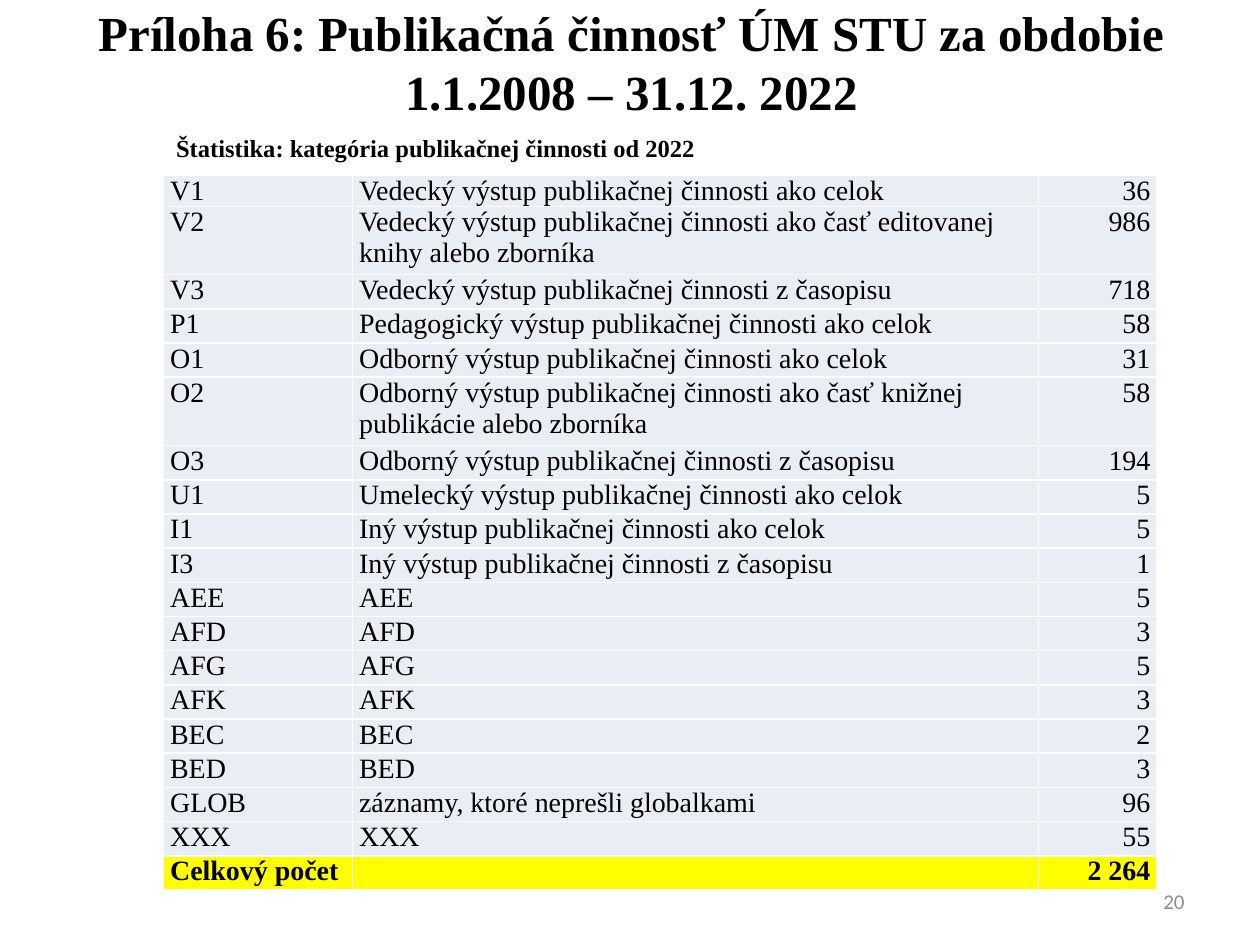
from lxml.etree import SubElement
from pptx import Presentation
from pptx.dml.color import RGBColor
from pptx.enum.text import MSO_ANCHOR as Anchor, PP_ALIGN as Align
from pptx.oxml.ns import qn
from pptx.util import Cm, Pt

BLACK = RGBColor(0x00, 0x00, 0x00)
GREY = RGBColor(0x8C, 0x8C, 0x8C)
PALE = RGBColor(0xE9, 0xED, 0xF4)
YELLOW = RGBColor(0xFF, 0xFF, 0x00)
WHITE = RGBColor(0xFF, 0xFF, 0xFF)
SERIF = "Times New Roman"

HEADINGS = [
    ("Príloha 6: Publikačná činnosť ÚM STU za obdobie 1.1.2008 – 31.12. 2022",
     (1.3, 0.23, 22.86, 2.36), Align.CENTER, {"margin_bottom": Cm(0.46), "word_wrap": True},
     {"size": Pt(28), "name": SERIF, "bold": True}, BLACK),
    ("Štatistika: kategória publikačnej činnosti od 2022",
     (3.3, 2.54, 11.99, 0.86), Align.LEFT, {"word_wrap": False},
     {"size": Pt(14), "name": SERIF, "bold": True}, BLACK),
    ("20", (18.21, 17.65, 5.92, 1.02), Align.RIGHT, {"word_wrap": True},
     {"size": Pt(12), "name": "Calibri", "bold": False}, GREY),
]

PUBLICATIONS = [
    ("V1", "Vedecký výstup publikačnej činnosti ako celok", "36"),
    ("V2", "Vedecký výstup publikačnej činnosti ako časť editovanej knihy alebo zborníka", "986"),
    ("V3", "Vedecký výstup publikačnej činnosti z časopisu", "718"),
    ("P1", "Pedagogický výstup publikačnej činnosti ako celok", "58"),
    ("O1", "Odborný výstup publikačnej činnosti ako celok", "31"),
    ("O2", "Odborný výstup publikačnej činnosti ako časť knižnej publikácie alebo zborníka", "58"),
    ("O3", "Odborný výstup publikačnej činnosti z časopisu", "194"),
    ("U1", "Umelecký výstup publikačnej činnosti ako celok", "5"),
    ("I1", "Iný výstup publikačnej činnosti ako celok", "5"),
    ("I3", "Iný výstup publikačnej činnosti z časopisu", "1"),
    ("AEE", "AEE", "5"),
    ("AFD", "AFD", "3"),
    ("AFG", "AFG", "5"),
    ("AFK", "AFK", "3"),
    ("BEC", "BEC", "2"),
    ("BED", "BED", "3"),
    ("GLOB", "záznamy, ktoré neprešli globalkami", "96"),
    ("XXX", "XXX", "55"),
    ("Celkový počet", "", "2 264"),
]
COLUMN_WIDTHS = (3.81, 13.82, 2.39)
COLUMN_ALIGNS = (Align.LEFT, Align.LEFT, Align.RIGHT)
FIRST_HEIGHT, LINE_HEIGHT = 0.08, 0.69
LONG_TEXT = 60
CELL_FORMAT = {"margin_left": Cm(0.13), "margin_right": Cm(0.13),
               "margin_top": 0, "margin_bottom": 0}
TABLE_FORMAT = {"first_row": False, "horz_banding": False}


def apply(target, values):
    for key, value in values.items():
        setattr(target, key, value)


def style_paragraph(paragraph, align, font_format, color):
    paragraph.alignment = align
    apply(paragraph.font, font_format)
    paragraph.font.color.rgb = color


def add_borders(cell):
    properties = cell._tc.get_or_add_tcPr()
    for position, side in enumerate(("lnL", "lnR", "lnT", "lnB")):
        line = properties.makeelement(qn(f"a:{side}"), {"w": str(Pt(1))})
        properties.insert(position, line)
        fill = SubElement(line, qn("a:solidFill"))
        SubElement(fill, qn("a:srgbClr"), val=str(WHITE))


def add_heading(slide, wording, place, align, frame_format, font_format, color):
    frame = slide.shapes.add_textbox(*map(Cm, place)).text_frame
    frame.text = wording
    frame.vertical_anchor = Anchor.MIDDLE
    apply(frame, frame_format)
    style_paragraph(frame.paragraphs[0], align, font_format, color)


def row_height(number, description):
    if number == 0:
        return FIRST_HEIGHT
    return LINE_HEIGHT * (2 if len(description) > LONG_TEXT else 1)


def add_publications(slide):
    heights = [row_height(n, entry[1]) for n, entry in enumerate(PUBLICATIONS)]
    table = slide.shapes.add_table(
        len(PUBLICATIONS), len(COLUMN_WIDTHS), Cm(3.3), Cm(3.53),
        Cm(sum(COLUMN_WIDTHS)), Cm(sum(heights))).table
    apply(table, TABLE_FORMAT)
    for column, width in zip(table.columns, COLUMN_WIDTHS):
        column.width = Cm(width)
    for row, height, entry in zip(table.rows, heights, PUBLICATIONS):
        row.height = Cm(height)
        is_total = entry is PUBLICATIONS[-1]
        font_format = {"size": Pt(16), "name": SERIF, "bold": is_total}
        for cell, wording, align in zip(row.cells, entry, COLUMN_ALIGNS):
            cell.text = wording
            apply(cell, CELL_FORMAT)
            cell.fill.solid()
            cell.fill.fore_color.rgb = YELLOW if is_total else PALE
            style_paragraph(cell.text_frame.paragraphs[0], align, font_format, BLACK)
            add_borders(cell)


def main():
    deck = Presentation()
    apply(deck, {"slide_width": Cm(25.4), "slide_height": Cm(19.05)})
    slide = deck.slides.add_slide(deck.slide_layouts[6])
    add_publications(slide)
    for heading in HEADINGS:
        add_heading(slide, *heading)
    deck.save("out.pptx")


if __name__ == "__main__":
    main()
